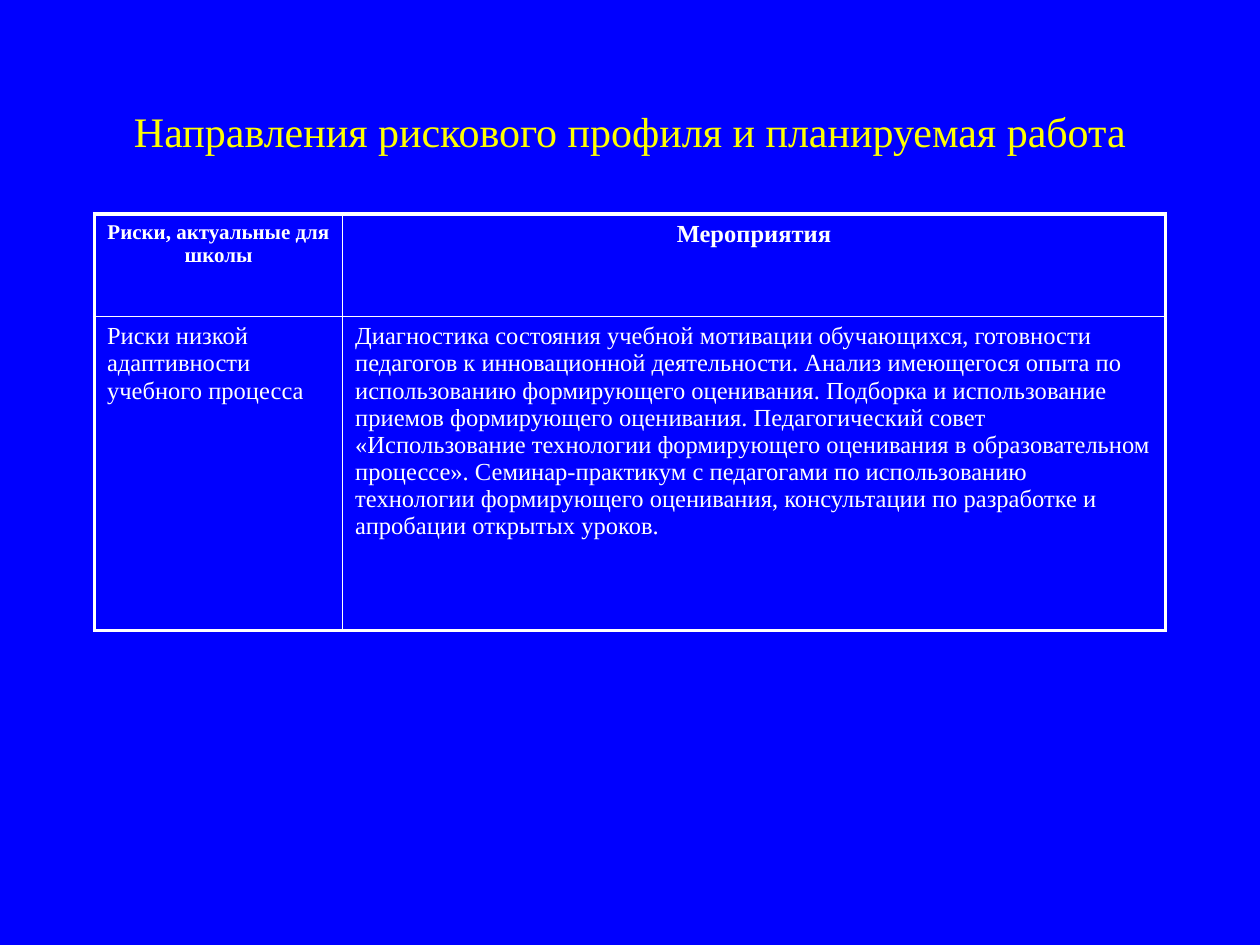
from lxml import etree
from pptx import Presentation
from pptx.dml.color import RGBColor
from pptx.enum import text
from pptx.oxml import ns
from pptx.util import Pt

HUES = {"back": "0000FF", "title": "FFFF00", "ink": "FFFFFF"}
FACE = "Times New Roman"
THICK, THIN = 2.25, 1
MID, LEFT = text.PP_ALIGN.CENTER, text.PP_ALIGN.LEFT


def write(frame, words, hue, align, form):
    frame.text = words
    para = frame.paragraphs[0]
    para.alignment = align
    font = para.runs[0].font
    for key, val in {"name": FACE, **form}.items():
        setattr(font, key, val)
    font.color.rgb = RGBColor.from_string(HUES[hue])


def edge(cell, side, width):
    line = etree.SubElement(cell._tc.get_or_add_tcPr(), ns.qn(f"a:ln{side}"), w=str(Pt(width)))
    fill = etree.SubElement(line, ns.qn("a:solidFill"))
    etree.SubElement(fill, ns.qn("a:srgbClr"), val=HUES["ink"])


deck = Presentation()
deck.slide_width, deck.slide_height = Pt(720), Pt(540)
slide = deck.slides.add_slide(deck.slide_layouts[5])
slide.background.fill.solid()
slide.background.fill.fore_color.rgb = RGBColor.from_string(HUES["back"])

title = slide.shapes.title
for key, val in {"left": 54, "top": 49, "width": 612, "height": 51}.items():
    setattr(title, key, Pt(val))
write(title.text_frame, "Направления рискового профиля и планируемая работа",
      "title", MID, {"size": Pt(24), "bold": False})
title.text_frame.vertical_anchor = text.MSO_ANCHOR.MIDDLE

rows = [
    [("Риски, актуальные для школы", 12), ("Мероприятия", 14)],
    [("Риски низкой адаптивности учебного процесса", 14),
     ("Диагностика состояния учебной мотивации обучающихся, готовности педагогов "
      "к инновационной деятельности. Анализ имеющегося опыта по использованию "
      "формирующего оценивания. Подборка и использование приемов формирующего "
      "оценивания. Педагогический совет «Использование технологии формирующего "
      "оценивания в образовательном процессе». Семинар-практикум с педагогами по "
      "использованию технологии формирующего оценивания, консультации по "
      "разработке и апробации открытых уроков.", 14)],
]
wides, highs = [141.8, 470.2], [58.6, 179.4]
grid = slide.shapes.add_table(2, 2, Pt(54), Pt(122.4), Pt(sum(wides)), Pt(sum(highs))).table
for col, wide in zip(grid.columns, wides):
    col.width = Pt(wide)
for row, high in zip(grid.rows, highs):
    row.height = Pt(high)

for r, row in enumerate(rows):
    for c, (words, size) in enumerate(row):
        cell = grid.cell(r, c)
        head = r == 0
        write(cell.text_frame, words, "ink", MID if head else LEFT,
              {"size": Pt(size), "bold": head})
        outer = {"L": c == 0, "R": c == 1, "T": r == 0, "B": r == 1}
        for side, rim in outer.items():
            edge(cell, side, THICK if rim else THIN)
        cell.fill.background()

deck.save("out.pptx")
